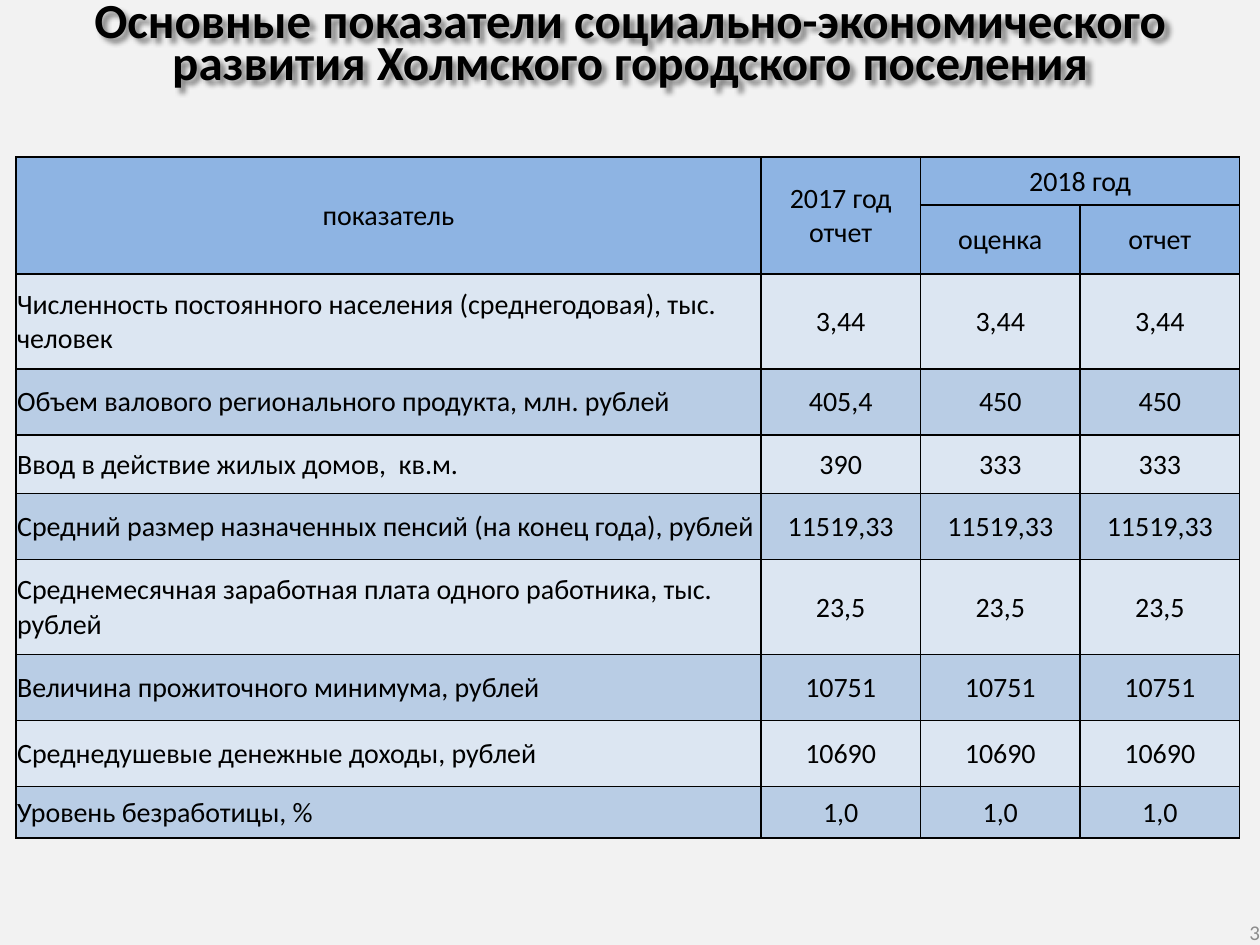
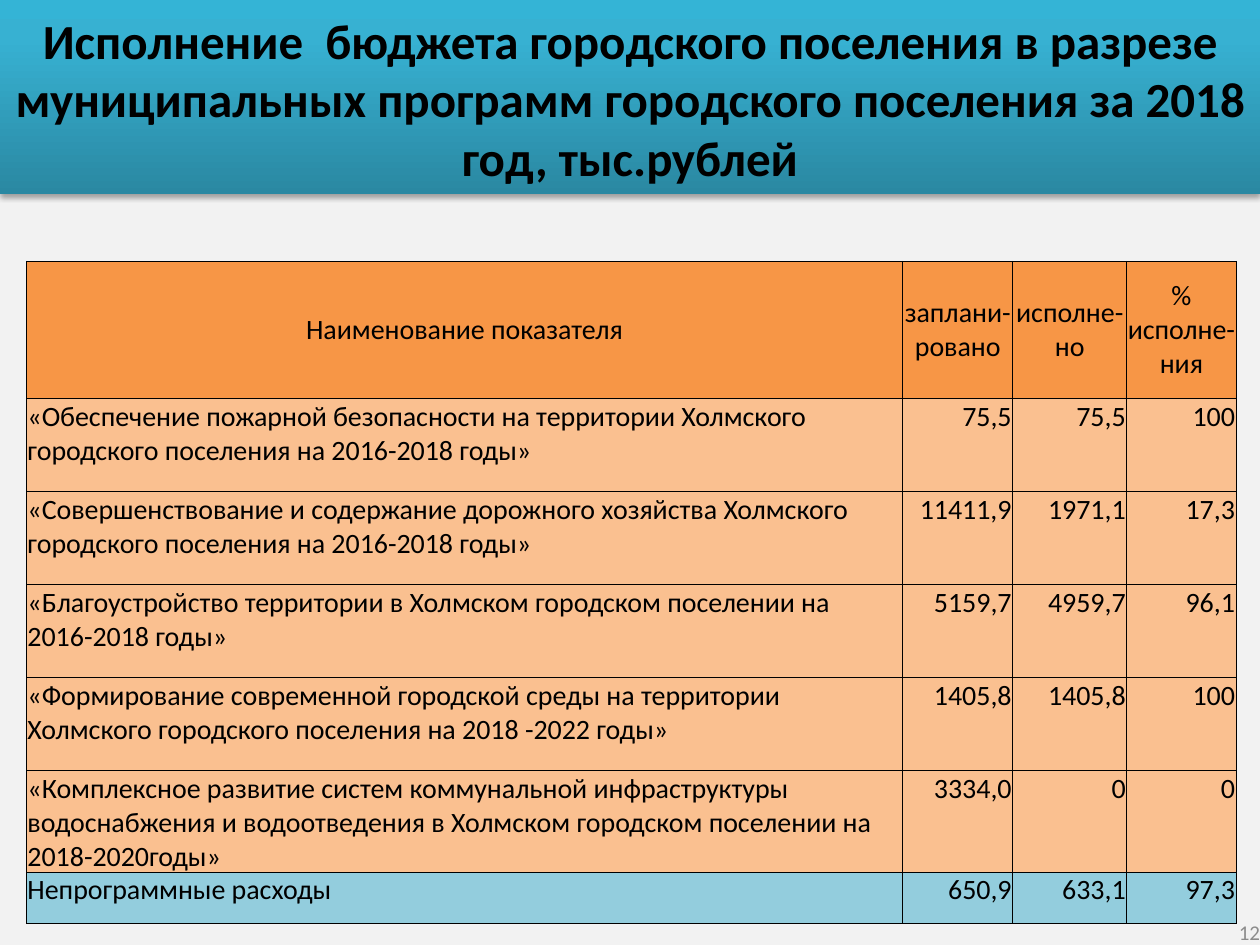
from lxml import etree
from pptx import Presentation
from pptx.dml.color import RGBColor
from pptx.enum.text import MSO_ANCHOR, MSO_AUTO_SIZE, PP_ALIGN
from pptx.oxml import parse_xml
from pptx.oxml.ns import nsdecls, qn
from pptx.util import Pt

LEFT, CENTER, RIGHT = PP_ALIGN.LEFT, PP_ALIGN.CENTER, PP_ALIGN.RIGHT
TOP, MIDDLE = MSO_ANCHOR.TOP, MSO_ANCHOR.MIDDLE
NO_AUTOFIT = MSO_AUTO_SIZE.NONE

FONT = "Calibri"
SLIDE_WIDTH, SLIDE_HEIGHT = 720, 540
TITLE_ONLY_LAYOUT = 5
COLORS = {
    "background": "F2F2F2",
    "text": "000000",
    "page_number": "8C8C8C",
    "band_dark": "2A88A2",
    "band_middle": "37B1D2",
    "band_light": "34B4D6",
    "blue_header": "8EB4E3",
    "blue_pale": "DCE6F2",
    "blue_medium": "B9CDE5",
    "orange_header": "F79646",
    "orange_pale": "FAC090",
    "teal": "93CDDD",
}

INDICATORS = [
    ("показатель", "2017 год отчет", "2018 год", ""),
    ("", "", "оценка", "отчет"),
    ("Численность постоянного населения (среднегодовая), тыс. человек", "3,44", "3,44", "3,44"),
    ("Объем валового регионального продукта, млн. рублей", "405,4", "450", "450"),
    ("Ввод в действие жилых домов,  кв.м.", "390", "333", "333"),
    ("Средний размер назначенных пенсий (на конец года), рублей",
     "11519,33", "11519,33", "11519,33"),
    ("Среднемесячная заработная плата одного работника, тыс. рублей", "23,5", "23,5", "23,5"),
    ("Величина прожиточного минимума, рублей", "10751", "10751", "10751"),
    ("Среднедушевые денежные доходы, рублей", "10690", "10690", "10690"),
    ("Уровень безработицы, %", "1,0", "1,0", "1,0"),
]

PROGRAMS = [
    ("Наименование показателя", "заплани-\vровано", "исполне-но", "% исполне-ния"),
    ("«Обеспечение пожарной безопасности на территории Холмского городского поселения "
     "на 2016-2018 годы»", "75,5", "75,5", "100"),
    ("«Совершенствование и содержание дорожного хозяйства Холмского городского поселения "
     "на 2016-2018 годы»", "11411,9", "1971,1", "17,3"),
    ("«Благоустройство территории в Холмском городском поселении на 2016-2018 годы»",
     "5159,7", "4959,7", "96,1"),
    ("«Формирование современной городской среды на территории Холмского городского поселения "
     "на 2018 -2022 годы»", "1405,8", "1405,8", "100"),
    ("«Комплексное развитие систем коммунальной инфраструктуры водоснабжения и водоотведения "
     "в Холмском городском поселении на 2018-2020годы»", "3334,0", "0", "0"),
    ("Непрограммные расходы", "650,9", "633,1", "97,3"),
]


def color(name):
    return RGBColor.from_string(COLORS[name])


def set_insets(target, left, top, right, bottom):
    target.margin_left, target.margin_top = Pt(left), Pt(top)
    target.margin_right, target.margin_bottom = Pt(right), Pt(bottom)


def format_text(text_frame, size, alignment, color_name="text", bold=False):
    for paragraph in text_frame.paragraphs:
        paragraph.alignment = alignment
        paragraph.font.name = FONT
        paragraph.font.size = Pt(size)
        paragraph.font.bold = bold
        paragraph.font.color.rgb = color(color_name)


def add_shadow(shape, blur, distance, angle, opacity):
    shape._element.spPr.append(parse_xml(
        f'<a:effectLst {nsdecls("a")}><a:outerShdw blurRad="{Pt(blur)}" dist="{Pt(distance)}" '
        f'dir="{angle * 60000}" algn="tl" rotWithShape="0"><a:srgbClr val="{COLORS["text"]}">'
        f'<a:alpha val="{opacity * 1000}"/></a:srgbClr></a:outerShdw></a:effectLst>'))


def fill_band(shape):
    stops = [(0, "band_dark"), (80, "band_middle"), (100, "band_light")]
    stop_xml = "".join(f'<a:gs pos="{position * 1000}"><a:srgbClr val="{COLORS[name]}"/></a:gs>'
                       for position, name in stops)
    shape._element.spPr.append(parse_xml(
        f'<a:gradFill {nsdecls("a")} rotWithShape="1"><a:gsLst>{stop_xml}</a:gsLst>'
        f'<a:lin ang="{270 * 60000}" scaled="0"/></a:gradFill>'))


def set_title(slide, text, height, top_inset):
    title = slide.shapes.title
    title.left, title.top, title.width, title.height = Pt(0), Pt(0), Pt(SLIDE_WIDTH), Pt(height)
    text_frame = title.text_frame
    text_frame.text = text
    text_frame.word_wrap = True
    text_frame.auto_size = NO_AUTOFIT
    text_frame.vertical_anchor = TOP
    set_insets(text_frame, 7.2, top_inset, 7.2, 3.6)
    format_text(text_frame, 28, CENTER, bold=True)
    return title


def add_page_number(slide, number):
    box = slide.shapes.add_textbox(Pt(552), Pt(525), Pt(168), Pt(15))
    text_frame = box.text_frame
    text_frame.text = str(number)
    text_frame.word_wrap = True
    text_frame.vertical_anchor = MIDDLE
    set_insets(text_frame, 0, 0, 0, 0)
    format_text(text_frame, 12, RIGHT, "page_number")


def set_borders(cell, width):
    properties = cell._tc.get_or_add_tcPr()
    for side in ("a:lnL", "a:lnR", "a:lnT", "a:lnB"):
        line = etree.SubElement(properties, qn(side), w=str(Pt(width)))
        line_fill = etree.SubElement(line, qn("a:solidFill"))
        etree.SubElement(line_fill, qn("a:srgbClr"), val=COLORS["text"])


def add_table(slide, left, top, widths, heights, rows, row_fills, header_rows,
              value_alignment, body_anchor, border_width):
    frame = slide.shapes.add_table(len(rows), len(widths), Pt(left), Pt(top),
                                   Pt(sum(widths)), Pt(sum(heights)))
    table = frame.table
    table.first_row = table.horz_banding = False
    for column, width in zip(table.columns, widths):
        column.width = Pt(width)
    for row_index, (values, height, fill) in enumerate(zip(rows, heights, row_fills)):
        table.rows[row_index].height = Pt(height)
        is_header = row_index < header_rows
        for column_index, value in enumerate(values):
            cell = table.cell(row_index, column_index)
            cell.text = value
            cell.vertical_anchor = MIDDLE if is_header else body_anchor
            set_insets(cell, 0.6, 0.6, 0.6, 0)
            set_borders(cell, border_width)
            cell.fill.solid()
            cell.fill.fore_color.rgb = color(fill)
            body_alignment = value_alignment if column_index else LEFT
            format_text(cell.text_frame, 16, CENTER if is_header else body_alignment)
    return table


def add_title_slide(presentation, page_number):
    slide = presentation.slides.add_slide(presentation.slide_layouts[TITLE_ONLY_LAYOUT])
    slide.background.fill.solid()
    slide.background.fill.fore_color.rgb = color("background")
    add_page_number(slide, page_number)
    return slide


def build_indicators_slide(presentation):
    slide = add_title_slide(presentation, 3)
    title = set_title(slide, "Основные показатели социально-экономического развития "
                      "Холмского городского поселения", 106, 3.6)
    title.text_frame.paragraphs[0].line_spacing = Pt(24)
    add_shadow(title, 3, 3, 45, 45)
    table = add_table(
        slide, 9.2, 89.8, [425.6] + [91.2] * 3,
        [27.4, 39.4, 54.2, 37.8, 33.4, 37.8, 54.2, 37.8, 37.8, 29.5], INDICATORS,
        ["blue_header"] * 2 + ["blue_pale", "blue_medium"] * 4,
        header_rows=2, value_alignment=CENTER, body_anchor=MIDDLE, border_width=1)
    for first, last in [((0, 0), (1, 0)), ((0, 1), (1, 1)), ((0, 2), (0, 3))]:
        table.cell(*first).merge(table.cell(*last))


def build_programs_slide(presentation):
    slide = add_title_slide(presentation, 12)
    title = set_title(slide, "Исполнение  бюджета городского поселения в разрезе муниципальных "
                      "программ городского поселения за 2018 год, тыс.рублей", 111, 5.76)
    fill_band(title)
    add_shadow(title, 3.1, 1.8, 90, 35)
    table = add_table(
        slide, 15.1, 149.3, [500.8, 62.8, 65.2, 62.4], [78.3] + [53.15] * 5 + [29.5], PROGRAMS,
        ["orange_header"] + ["orange_pale"] * 5 + ["teal"],
        header_rows=1, value_alignment=RIGHT, body_anchor=TOP, border_width=0.5)
    for cell in table.rows[0].cells:
        set_insets(cell, 0, 0, 0, 0)


def main():
    presentation = Presentation()
    presentation.slide_width, presentation.slide_height = Pt(SLIDE_WIDTH), Pt(SLIDE_HEIGHT)
    build_indicators_slide(presentation)
    build_programs_slide(presentation)
    presentation.save("out.pptx")


if __name__ == "__main__":
    main()
